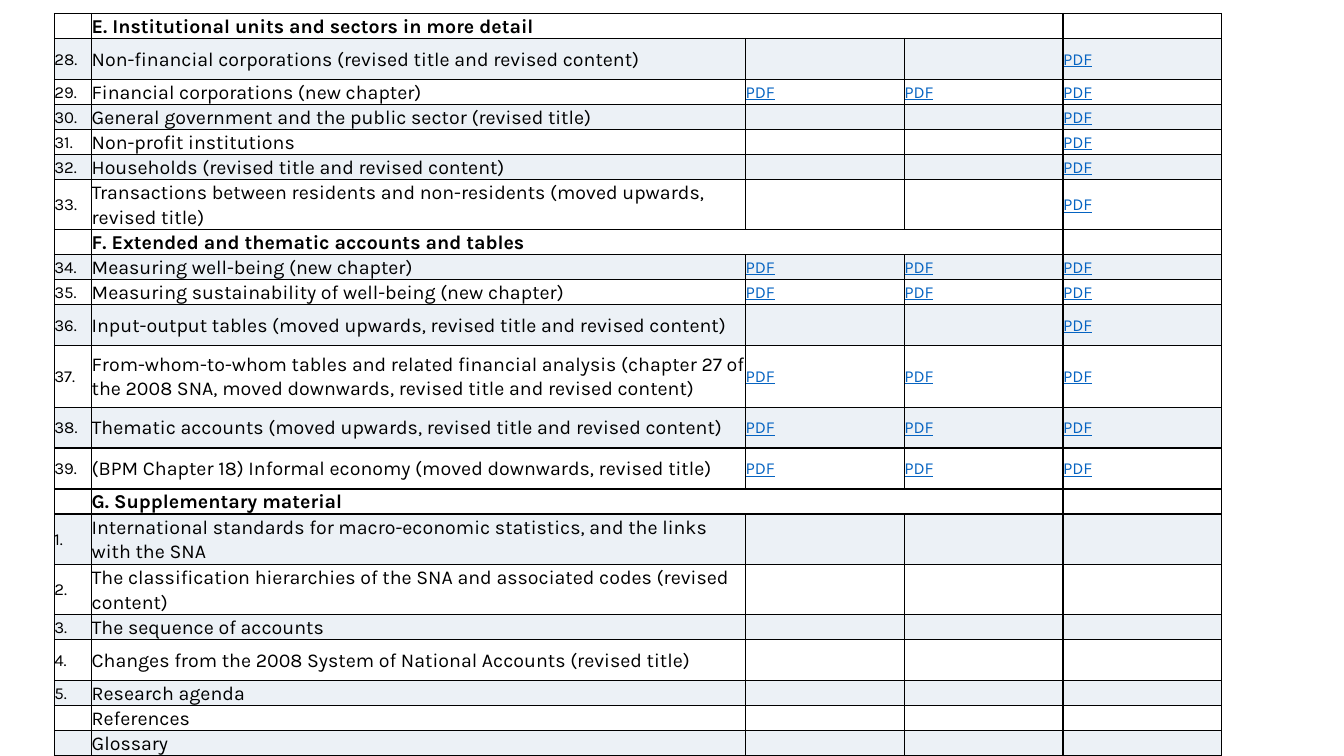
from lxml import etree
from pptx import Presentation
from pptx.dml.color import RGBColor
from pptx.enum.text import MSO_ANCHOR
from pptx.oxml import parse_xml
from pptx.oxml.ns import nsdecls, qn
from pptx.util import Cm, Pt

COLORS = {"text": "000000", "border": "000000", "link": "0563C1", "band": "ECF1F6"}
FONT = "Karla"
LOW, MEDIUM, DOUBLE, TALL = 0.63, 1.03, 1.27, 1.55
COLUMN_WIDTHS = [0.94, 16.48, 4, 4, 4]

SECTIONS = [
    ("E. Institutional units and sectors in more detail", [
        ("28.", "Non-financial corporations (revised title and revised content)", MEDIUM, 1),
        ("29.", "Financial corporations (new chapter)", LOW, 3),
        ("30.", "General government and the public sector (revised title)", LOW, 1),
        ("31.", "Non-profit institutions", LOW, 1),
        ("32.", "Households (revised title and revised content)", LOW, 1),
        ("33.", "Transactions between residents and non-residents (moved upwards, revised title)", DOUBLE, 1),
    ]),
    ("F. Extended and thematic accounts and tables", [
        ("34.", "Measuring well-being (new chapter)", LOW, 3),
        ("35.", "Measuring sustainability of well-being (new chapter)", LOW, 3),
        ("36.", "Input-output tables (moved upwards, revised title and revised content)", MEDIUM, 1),
        ("37.", "From-whom-to-whom tables and related financial analysis (chapter 27 of the 2008 SNA, "
                "moved downwards, revised title and revised content)", TALL, 3),
        ("38.", "Thematic accounts (moved upwards, revised title and revised content)", MEDIUM, 3),
        ("39.", "(BPM Chapter 18) Informal economy (moved downwards, revised title)", MEDIUM, 3),
    ]),
    ("G. Supplementary material", [
        ("1.", "International standards for macro-economic statistics, and the links with the SNA", DOUBLE, 0),
        ("2.", "The classification hierarchies of the SNA and associated codes (revised content)", DOUBLE, 0),
        ("3.", "The sequence of accounts", LOW, 0),
        ("4.", "Changes from the 2008 System of National Accounts (revised title)", MEDIUM, 0),
        ("5.", "Research agenda", LOW, 0),
        ("", "References", LOW, 0),
        ("", "Glossary", LOW, 0),
    ]),
]


def style_cell(cell, banded):
    cell.margin_left = cell.margin_right = cell.margin_top = cell.margin_bottom = 0
    cell.vertical_anchor = MSO_ANCHOR.MIDDLE
    for side in ("lnL", "lnR", "lnT", "lnB"):
        cell._tc.get_or_add_tcPr().append(parse_xml(
            f'<a:{side} {nsdecls("a")} w="12700"><a:solidFill>'
            f'<a:srgbClr val="{COLORS["border"]}"/></a:solidFill></a:{side}>'))
    if banded:
        cell.fill.solid()
        cell.fill.fore_color.rgb = RGBColor.from_string(COLORS["band"])
    else:
        cell.fill.background()


def write_cell(cell, text, size, color="text", bold=False):
    entry = cell.text_frame.paragraphs[0]
    entry.line_spacing = 1.07
    entry.space_after = Pt(8)
    entry.font.name = FONT
    entry.font.size = Pt(size)
    entry.font.bold = bold
    entry.font.underline = color == "link"
    entry.font.color.rgb = RGBColor.from_string(COLORS[color])
    if text:
        entry.add_run().text = text
    else:
        etree.SubElement(entry._p, qn("a:endParaRPr"), sz=str(size * 100))


prs = Presentation()
prs.slide_width, prs.slide_height = Cm(33.87), Cm(19.05)
slide = prs.slides.add_slide(prs.slide_layouts[6])

lines = []
for heading, chapters in SECTIONS:
    lines.append(("", heading, LOW, 0, True, False))
    for position, chapter in enumerate(chapters):
        lines.append((*chapter, False, position % 2 == 0))

contents = slide.shapes.add_table(
    len(lines), len(COLUMN_WIDTHS), Cm(1.37), Cm(0.34),
    Cm(sum(COLUMN_WIDTHS)), Cm(sum(line[2] for line in lines))).table
contents.first_row = contents.horz_banding = False
for column, width in zip(contents.columns, COLUMN_WIDTHS):
    column.width = Cm(width)

for index, (number, title, height, link_count, is_heading, banded) in enumerate(lines):
    contents.rows[index].height = Cm(height)
    links = [""] * (3 - link_count) + ["PDF"] * link_count
    for col, text in enumerate([number, title, *links]):
        cell = contents.cell(index, col)
        style_cell(cell, banded)
        write_cell(cell, text, 14 if col == 1 else 12,
                   "link" if text == "PDF" else "text", is_heading)
    if is_heading:
        contents.cell(index, 1).merge(contents.cell(index, 3))

prs.save("out.pptx")
